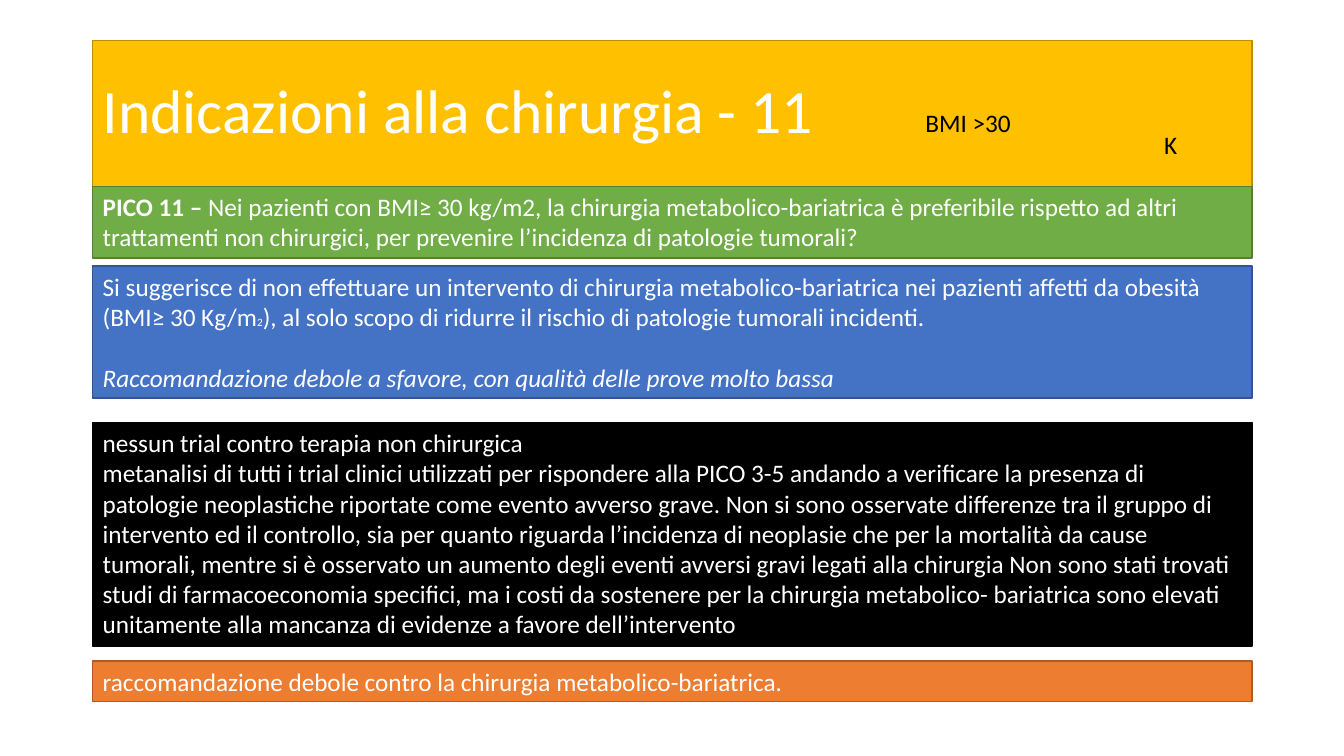
from pptx import Presentation
from pptx.dml.color import RGBColor
from pptx.enum.shapes import MSO_SHAPE
from pptx.enum.text import MSO_ANCHOR, PP_ALIGN
from pptx.util import Inches, Pt

FONT = "Calibri"
LEFT, WIDTH = 0.92, 11.5

# Each paragraph is a list of (text, font overrides) runs.
QUESTION = [[
    ("PICO 11 – ", {"bold": True}),
    ("Nei pazienti con BMI≥ 30 kg/m2, la chirurgia metabolico-bariatrica è preferibile "
     "rispetto ad altri trattamenti non chirurgici, per prevenire l’incidenza di "
     "patologie tumorali?", {}),
]]
RECOMMENDATION = [
    [("Si suggerisce di non effettuare un intervento di chirurgia metabolico-bariatrica "
      "nei pazienti affetti da obesità (BMI≥ 30 Kg/m", {}),
     ("2", {"size": Pt(8)}),
     ("), al solo scopo di ridurre il rischio di patologie tumorali incidenti.", {})],
    [("Raccomandazione debole a sfavore, con qualità delle prove molto bassa",
      {"italic": True})],
]
EVIDENCE = [
    [("nessun trial contro terapia non chirurgica", {})],
    [("metanalisi di tutti i trial clinici utilizzati per rispondere alla PICO 3-5 andando "
      "a verificare la presenza di patologie neoplastiche riportate come evento avverso "
      "grave. Non si sono osservate differenze tra il gruppo di intervento ed il controllo, "
      "sia per quanto riguarda l’incidenza di neoplasie che per la mortalità da cause "
      "tumorali, mentre si è osservato un aumento degli eventi avversi gravi legati alla "
      "chirurgia Non sono stati trovati studi di farmacoeconomia specifici, ma i costi da "
      "sostenere per la chirurgia metabolico- bariatrica sono elevati unitamente alla "
      "mancanza di evidenze a favore dell’intervento", {})],
]
CONCLUSION = [[("raccomandazione debole contro la chirurgia metabolico-bariatrica.", {})]]


def rgb(color):
    return RGBColor.from_string(color)


def write(tf, paragraphs, color, size=18, align=PP_ALIGN.LEFT, gap=0):
    """Fill a text frame; gap is the space in points between paragraphs."""
    tf.word_wrap = True
    for i, runs in enumerate(paragraphs):
        p = tf.paragraphs[0] if i == 0 else tf.add_paragraph()
        p.alignment = align
        p.font.name = FONT
        p.font.size = Pt(size)
        p.font.color.rgb = rgb(color)
        if i:
            p.space_before = Pt(gap)
        for text, overrides in runs:
            r = p.add_run()
            r.text = text
            for name, value in overrides.items():
                setattr(r.font, name, value)


def add_band(s, top, height, fill, line, paragraphs, anchor=MSO_ANCHOR.TOP, **style):
    """Draw a full-width coloured band with white text."""
    sp = s.shapes.add_shape(MSO_SHAPE.RECTANGLE, Inches(LEFT), Inches(top),
                            Inches(WIDTH), Inches(height))
    sp.shadow.inherit = False
    sp.fill.solid()
    sp.fill.fore_color.rgb = rgb(fill)
    sp.line.color.rgb = rgb(line)
    sp.line.width = Pt(1)
    sp.text_frame.vertical_anchor = anchor
    write(sp.text_frame, paragraphs, "FFFFFF", **style)
    return sp


def add_label(s, left, top, width, text, align=PP_ALIGN.LEFT):
    box = s.shapes.add_textbox(Inches(left), Inches(top), Inches(width), Inches(0.4))
    write(box.text_frame, [[(text, {})]], "000000", align=align)


def add_header(s, top, height):
    """Title band with its two black labels."""
    title = add_band(s, top, height, "FFC000", "BD8E00",
                     [[("Indicazioni alla chirurgia - 11", {})]],
                     anchor=MSO_ANCHOR.MIDDLE, size=44)
    title.text_frame.paragraphs[0].line_spacing = 0.9
    add_label(s, LEFT + 10.18, top + 0.83, 1.02, "K", PP_ALIGN.CENTER)
    add_label(s, LEFT + 8.16, top + 0.62, 2.69, "BMI >30")


def main():
    prs = Presentation()
    prs.slide_width, prs.slide_height = Inches(13.33), Inches(7.5)
    s = prs.slides.add_slide(prs.slide_layouts[6])
    add_header(s, 0.4, 1.45)
    add_band(s, 1.85, 0.71, "70AD47", "538035", QUESTION)
    add_band(s, 2.64, 1.31, "4472C4", "325491", RECOMMENDATION, gap=22)
    add_band(s, 4.19, 2.22, "000000", "000000", EVIDENCE)
    add_band(s, 6.56, 0.4, "ED7D31", "AF5C24", CONCLUSION)
    prs.save("out.pptx")


if __name__ == "__main__":
    main()
